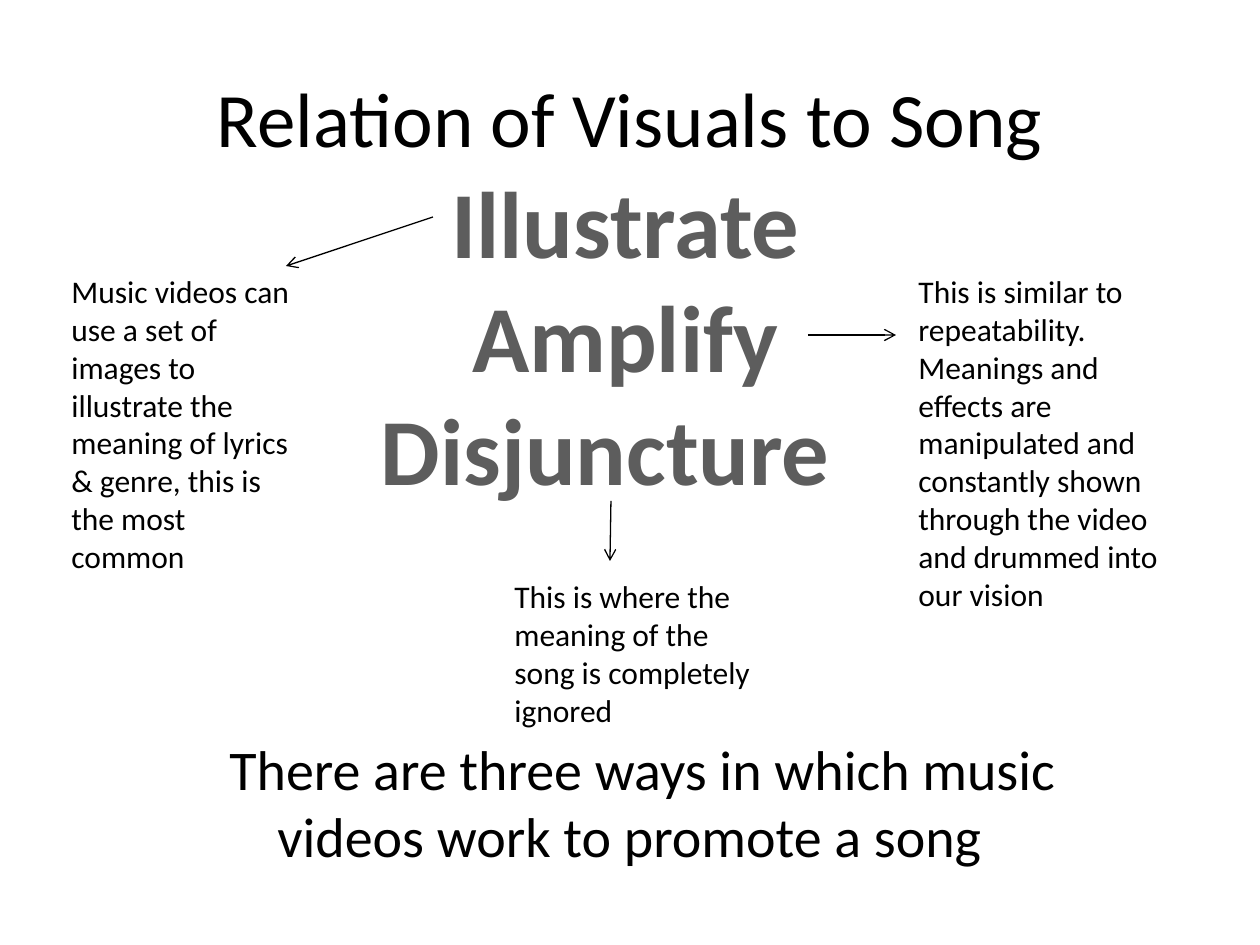
"""Build the slide on how the visuals of music videos relate to the song."""
from dataclasses import dataclass

from lxml.etree import SubElement
from pptx import Presentation
from pptx.dml.color import RGBColor
from pptx.enum.shapes import MSO_CONNECTOR
from pptx.enum.text import MSO_ANCHOR, PP_ALIGN
from pptx.oxml.ns import qn
from pptx.slide import Slide
from pptx.util import Emu, Pt

BLACK = RGBColor(0x00, 0x00, 0x00)
GREY = RGBColor(0x5D, 0x5D, 0x5D)
FONT = "Calibri"
EMU_PER_PX = 914400 / 126


@dataclass(frozen=True)
class Line:
    text: str
    left_margin: int = 0
    right_margin: int = 0
    first_indent: int = 0


@dataclass(frozen=True)
class Passage:
    lines: tuple[Line, ...]
    left: int
    top: int
    width: int
    height: int
    size: int = 18
    color: RGBColor = BLACK
    bold: bool = False
    align: PP_ALIGN = PP_ALIGN.LEFT
    anchor: MSO_ANCHOR = MSO_ANCHOR.TOP
    space_before: float = 0


@dataclass(frozen=True)
class Arrow:
    start: tuple[int, int]
    end: tuple[int, int]


PASSAGES = (
    Passage((Line("Relation of Visuals to Song"),), 63, 38, 1134, 157, size=44,
            align=PP_ALIGN.CENTER, anchor=MSO_ANCHOR.MIDDLE),
    Passage((Line("There are three ways in which music videos work to promote a song",
                  left_margin=48, first_indent=-48),),
            217, 728, 921, 168, size=32, space_before=6.4),
    Passage((Line("Illustrate", left_margin=20), Line("Amplify", left_margin=20),
             Line("Disjuncture", right_margin=20)),
            266, 158, 699, 357, size=54, color=GREY, bold=True, align=PP_ALIGN.CENTER),
    Passage((Line("Music videos can use a set of images to illustrate the meaning "
                  "of lyrics & genre, this is the most common"),), 59, 266, 256, 318),
    Passage((Line("This is similar to repeatability. Meanings and effects are manipulated "
                  "and constantly shown through the video and drummed into our vision"),),
            906, 266, 295, 357),
    Passage((Line("This is where the meaning of the song is completely ignored"),),
            502, 571, 276, 165),
)
ARROWS = (
    Arrow((433, 217), (286, 266)),
    Arrow((808, 335), (896, 335)),
    Arrow((611, 501), (610, 561)),
)


def px(length: int) -> Emu:
    """Turn pixels into EMU."""
    return Emu(round(length * EMU_PER_PX))


def draw_passage(slide: Slide, passage: Passage) -> None:
    """Add a text box with one paragraph per line."""
    box = slide.shapes.add_textbox(px(passage.left), px(passage.top),
                                   px(passage.width), px(passage.height))
    frame = box.text_frame
    frame.text = "\n".join(line.text for line in passage.lines)
    frame.word_wrap = True
    frame.vertical_anchor = passage.anchor
    for line, paragraph in zip(passage.lines, frame.paragraphs):
        paragraph.alignment = passage.align
        paragraph.space_before = Pt(passage.space_before)
        properties = paragraph._p.get_or_add_pPr()
        properties.set("marL", str(px(line.left_margin)))
        properties.set("marR", str(px(line.right_margin)))
        properties.set("indent", str(px(line.first_indent)))
        for run in paragraph.runs:
            run.font.name = FONT
            run.font.size = Pt(passage.size)
            run.font.bold = passage.bold
            run.font.color.rgb = passage.color


def draw_arrow(slide: Slide, arrow: Arrow) -> None:
    """Add a thin straight line with an open head at its end."""
    connector = slide.shapes.add_connector(
        MSO_CONNECTOR.STRAIGHT, *map(px, arrow.start + arrow.end))
    connector.line.color.rgb = BLACK
    connector.line.width = Pt(0.75)
    SubElement(connector.line._get_or_add_ln(), qn("a:tailEnd"), type="arrow")
    SubElement(connector._element.spPr, qn("a:effectLst"))


def main() -> None:
    """Draw and save the slide."""
    deck = Presentation()
    deck.slide_width, deck.slide_height = px(1260), px(945)
    slide = deck.slides.add_slide(deck.slide_layouts[6])
    for passage in PASSAGES:
        draw_passage(slide, passage)
    for arrow in ARROWS:
        draw_arrow(slide, arrow)
    deck.save("out.pptx")


if __name__ == "__main__":
    main()
